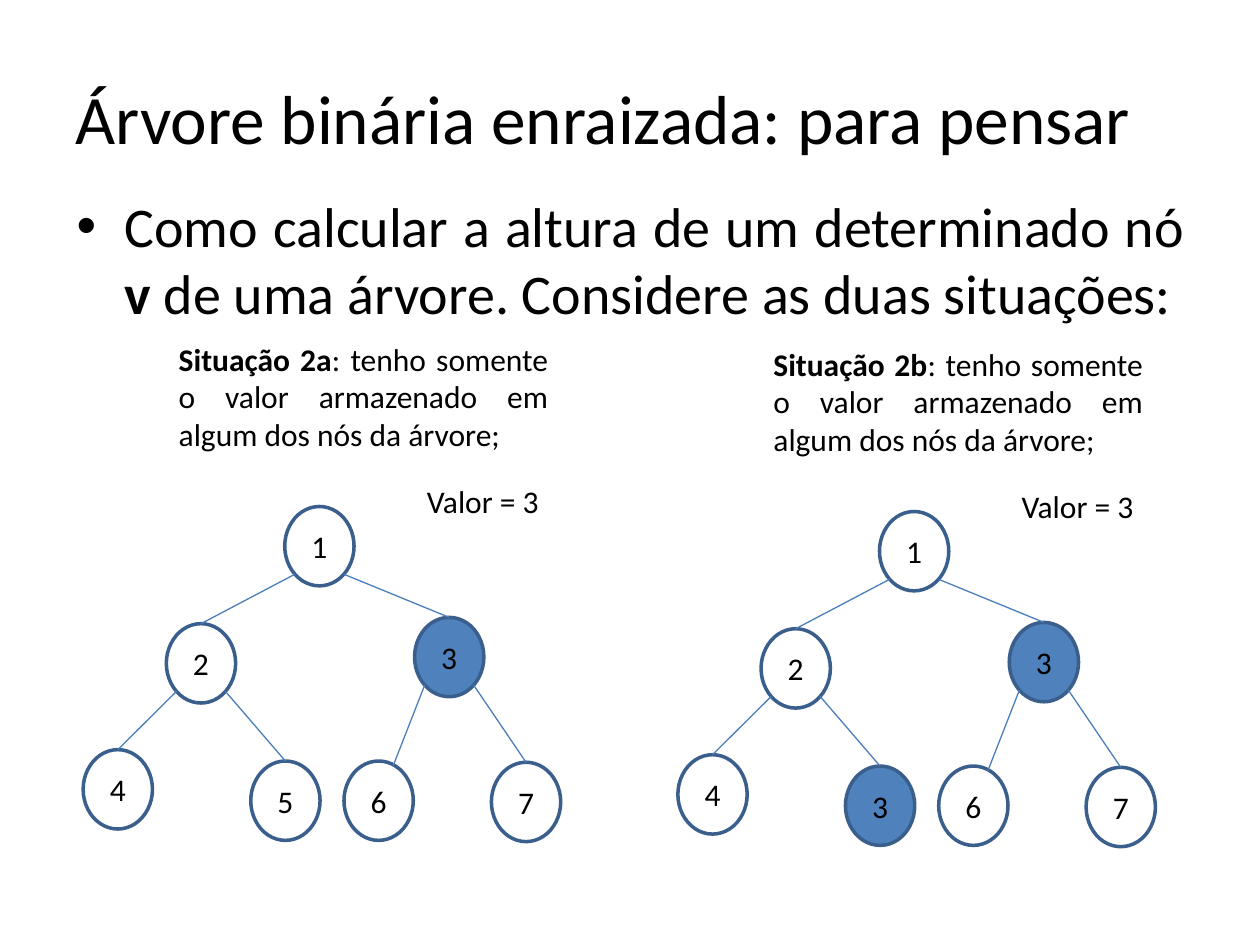
from math import sqrt

from lxml.etree import SubElement
from pptx import Presentation
from pptx.dml.color import RGBColor
from pptx.enum.shapes import MSO_CONNECTOR, MSO_SHAPE
from pptx.enum.text import MSO_ANCHOR, PP_ALIGN
from pptx.oxml.ns import qn
from pptx.util import Inches, Pt

W, H = Inches(10), Inches(7.5)
COLS, ROWS = 100, 75
NODE_W, NODE_H = 5.5, 6.3
FILL, OUTLINE, EDGE, BLACK = "4F81BD", "3A5F8C", "4B7EBC", "000000"
NODES = {1: (22.6, 40.2), 2: (13.2, 49.5), 3: (32.9, 49), 4: (6.6, 59.5),
         5: (19.9, 60.4), 6: (27.3, 60.4), 7: (39, 60.5)}
TIPS = {6: (0.71, 0.06)}


def x(col):
    """Turn grid columns into a length."""
    return round(W * col / COLS)


def y(row):
    """Turn grid rows into a length."""
    return round(H * row / ROWS)


def color(hex_code):
    """Turn a hex string into a colour."""
    return RGBColor.from_string(hex_code)


def write(tf, *runs, size=18, align=PP_ALIGN.LEFT, anchor=MSO_ANCHOR.TOP, wrap=True):
    """Write one paragraph of (text, bold) runs and return it."""
    tf.word_wrap, tf.vertical_anchor = wrap, anchor
    p = tf.paragraphs[0]
    p.alignment = align
    for text, bold in runs:
        r = p.add_run()
        r.text = text
        r.font.name, r.font.size, r.font.bold = "Calibri", Pt(size), bold
        r.font.color.rgb = color(BLACK)
    return p


def add_text(s, col, row, cols, rows, *runs, **fmt):
    """Add a text box on the grid and return its frame and paragraph."""
    tf = s.shapes.add_textbox(x(col), y(row), x(cols), y(rows)).text_frame
    return tf, write(tf, *runs, **fmt)


def add_bullet(p, indent):
    """Give a paragraph a round bullet with a hanging indent."""
    pPr = p._p.get_or_add_pPr()
    pPr.set("marL", str(indent))
    pPr.set("indent", str(-indent))
    SubElement(pPr, qn("a:buFont"), typeface="Arial")
    SubElement(pPr, qn("a:buChar"), char="•")


def add_node(s, col, row, label, filled):
    """Add one round tree node with its value."""
    sp = s.shapes.add_shape(MSO_SHAPE.OVAL, x(col), y(row), x(NODE_W), y(NODE_H))
    sp.shadow.inherit = False
    if filled:
        sp.fill.solid()
        sp.fill.fore_color.rgb = color(FILL)
    else:
        sp.fill.background()
    sp.line.color.rgb, sp.line.width = color(OUTLINE), Pt(2)
    write(sp.text_frame, (str(label), False), align=PP_ALIGN.CENTER,
          anchor=MSO_ANCHOR.MIDDLE)


def add_edge(s, parent, child, side, tip):
    """Join a parent's lower diagonal point to a child's tip."""
    reach = 1 / sqrt(8)
    start = (parent[0] + NODE_W * (0.5 + side * reach),
             parent[1] + NODE_H * (0.5 + reach))
    end = child[0] + NODE_W * tip[0], child[1] + NODE_H * tip[1]
    c = s.shapes.add_connector(MSO_CONNECTOR.STRAIGHT, x(start[0]), y(start[1]),
                               x(end[0]), y(end[1]))
    c.line.color.rgb, c.line.width = color(EDGE), Pt(0.75)
    SubElement(c._element.spPr, qn("a:effectLst"))


def add_situation(s, name, dx, dy, labels, marked):
    """Add a situation: its description, the value sought and its tree."""
    tf, _ = add_text(s, 13.2 + dx, 27.6 + dy, 31.3, 10.2, (name, True),
                     (": tenho somente o valor armazenado em algum dos nós da árvore;", False),
                     align=PP_ALIGN.JUSTIFY, anchor=MSO_ANCHOR.MIDDLE)
    tf.margin_top, tf.margin_bottom = 0, y(2.5)
    add_text(s, 32.9 + dx, 37.8 + dy, 11.6, 4, ("Valor = 3", False), wrap=False)
    spots = {n: (col + dx, row + dy) for n, (col, row) in NODES.items()}
    for n, spot in spots.items():
        add_node(s, *spot, labels.get(n, n), n in marked)
        if n > 1:
            add_edge(s, spots[n // 2], spot, 1 if n % 2 else -1, TIPS.get(n, (0.5, 0)))


def main():
    """Build the slide."""
    prs = Presentation()
    prs.slide_width, prs.slide_height = W, H
    s = prs.slides.add_slide(prs.slide_layouts[6])
    add_text(s, 5, 3, 90, 12.5, ("Árvore binária enraizada: para pensar", False),
             size=39.6, anchor=MSO_ANCHOR.MIDDLE)
    _, p = add_text(s, 5.1, 14.7, 90, 11,
                    ("Como calcular a altura de um determinado nó ", False), ("v ", True),
                    ("de uma árvore. Considere as duas situações:", False),
                    size=32, align=PP_ALIGN.JUSTIFY)
    add_bullet(p, x(3.8))
    add_situation(s, "Situação 2a", 0, 0, {}, {3})
    add_situation(s, "Situação 2b", 47.2, 0.4, {5: 3}, {3, 5})
    prs.save("out.pptx")


if __name__ == "__main__":
    main()
